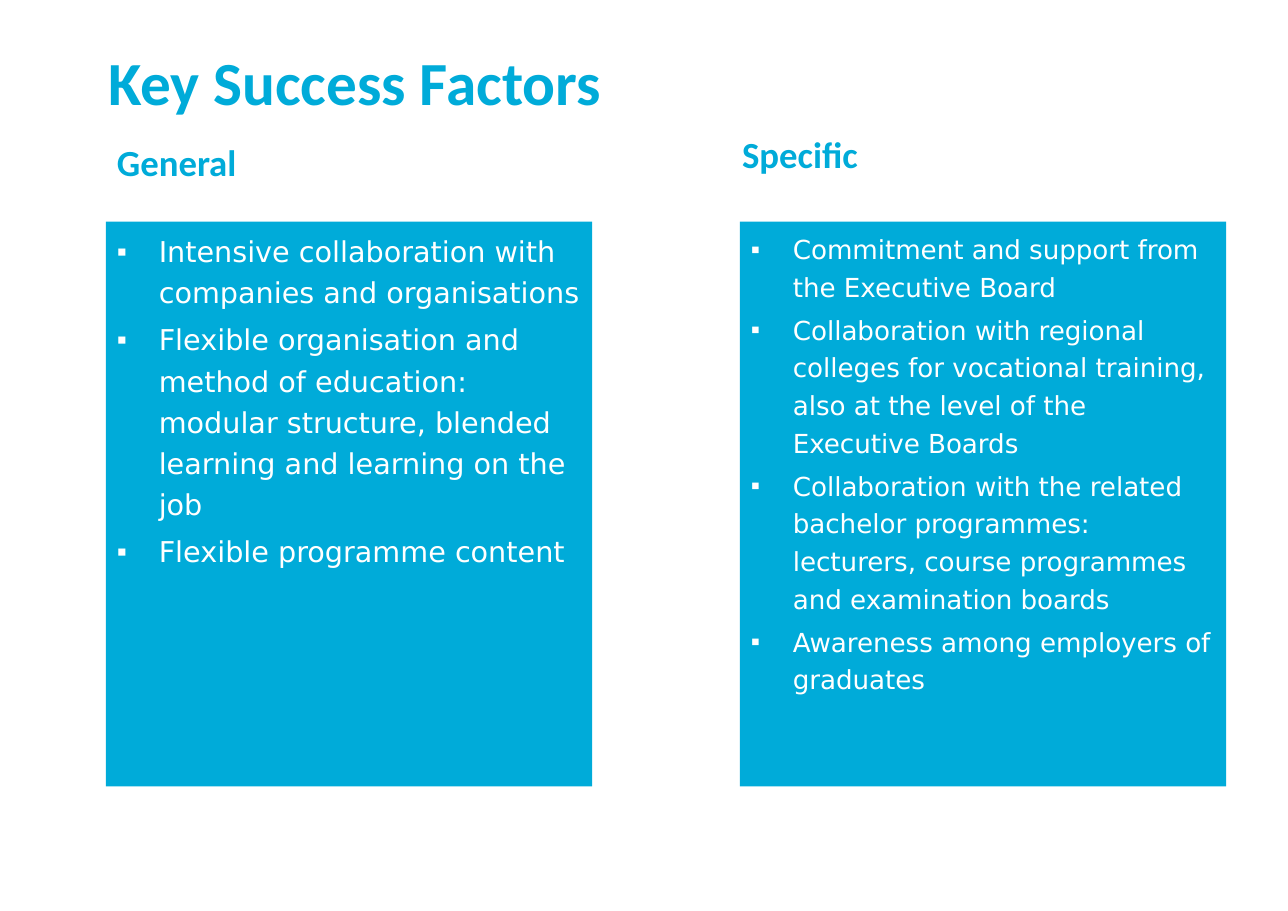
import pptx
import pptx.dml.color
import pptx.enum.text
import pptx.oxml.ns
import pptx.util
from lxml import etree

Inches = pptx.util.Inches
Pt = pptx.util.Pt

BLUE = pptx.dml.color.RGBColor(0x00, 0xAB, 0xD9)
WHITE = pptx.dml.color.RGBColor(0xFF, 0xFF, 0xFF)

TITLE = "Key Success Factors"
COLUMNS = [
    {
        "heading": "General",
        "heading_area": (0.96, 1.22, 3.15, 0.5),
        "size": 18.7,
        "factors": [
            "Intensive collaboration with companies and organisations",
            "Flexible organisation and method of education: modular structure, "
            "blended learning and learning on the job",
            "Flexible programme content",
        ],
    },
    {
        "heading": "Specific",
        "heading_area": (6.63, 1.14, 2.28, 0.5),
        "size": 17.1,
        "factors": [
            "Commitment and support from the Executive Board",
            "Collaboration with regional colleges for vocational training, "
            "also at the level of the Executive Boards",
            "Collaboration with the related bachelor programmes: lecturers, "
            "course programmes and examination boards",
            "Awareness among employers of graduates",
        ],
    },
]
PANEL_LEFT, PANEL_TOP, PANEL_WIDTH, PANEL_HEIGHT = 0.96, 2.01, 4.41, 5.12
PANEL_STEP = 5.75
INDENT = Inches(0.38)


def fill_placeholder(box, area, lines, font, size, color, bold):
    """Place a placeholder and write its lines in one style."""
    box.left, box.top, box.width, box.height = map(Inches, area)
    frame = box.text_frame
    frame.text = "\n".join(lines)
    frame.word_wrap = True
    frame.auto_size = pptx.enum.text.MSO_AUTO_SIZE.NONE
    frame.vertical_anchor = pptx.enum.text.MSO_ANCHOR.TOP
    for para in frame.paragraphs:
        para.alignment = pptx.enum.text.PP_ALIGN.LEFT
        para.space_before = Pt(0)
        for span in para.runs:
            span.font.name = font
            span.font.size = Pt(size)
            span.font.bold = bold
            span.font.color.rgb = color


def add_bullet(para, size):
    """Give a paragraph a square bullet, hanging indent and spacing."""
    para.line_spacing = 1.2
    para.space_before = Pt(round(size * 0.2, 1))
    properties = para._p.get_or_add_pPr()
    properties.set("marL", str(INDENT))
    properties.set("indent", str(-INDENT))
    bullet = etree.SubElement(properties, pptx.oxml.ns.qn("a:buChar"))
    bullet.set("char", "▪")


def main():
    """Build the slide and save it."""
    deck = pptx.Presentation()
    deck.slide_width, deck.slide_height = Inches(11.68), Inches(8.26)
    page = deck.slides.add_slide(deck.slide_layouts.get_by_name("Comparison"))
    title, *boxes = page.placeholders
    fill_placeholder(title, (0.88, 0.35, 7.32, 0.77), [TITLE], "Calibri", 40, BLUE, True)

    for index, column in enumerate(COLUMNS):
        heading, panel = boxes[2 * index:2 * index + 2]
        fill_placeholder(heading, column["heading_area"], [column["heading"]],
                         "Calibri", 24, BLUE, True)
        area = (PANEL_LEFT + index * PANEL_STEP, PANEL_TOP, PANEL_WIDTH, PANEL_HEIGHT)
        fill_placeholder(panel, area, column["factors"],
                         "DejaVu Sans", column["size"], WHITE, False)
        panel.fill.solid()
        panel.fill.fore_color.rgb = BLUE
        for para in panel.text_frame.paragraphs:
            add_bullet(para, column["size"])

    deck.save("out.pptx")


if __name__ == "__main__":
    main()
